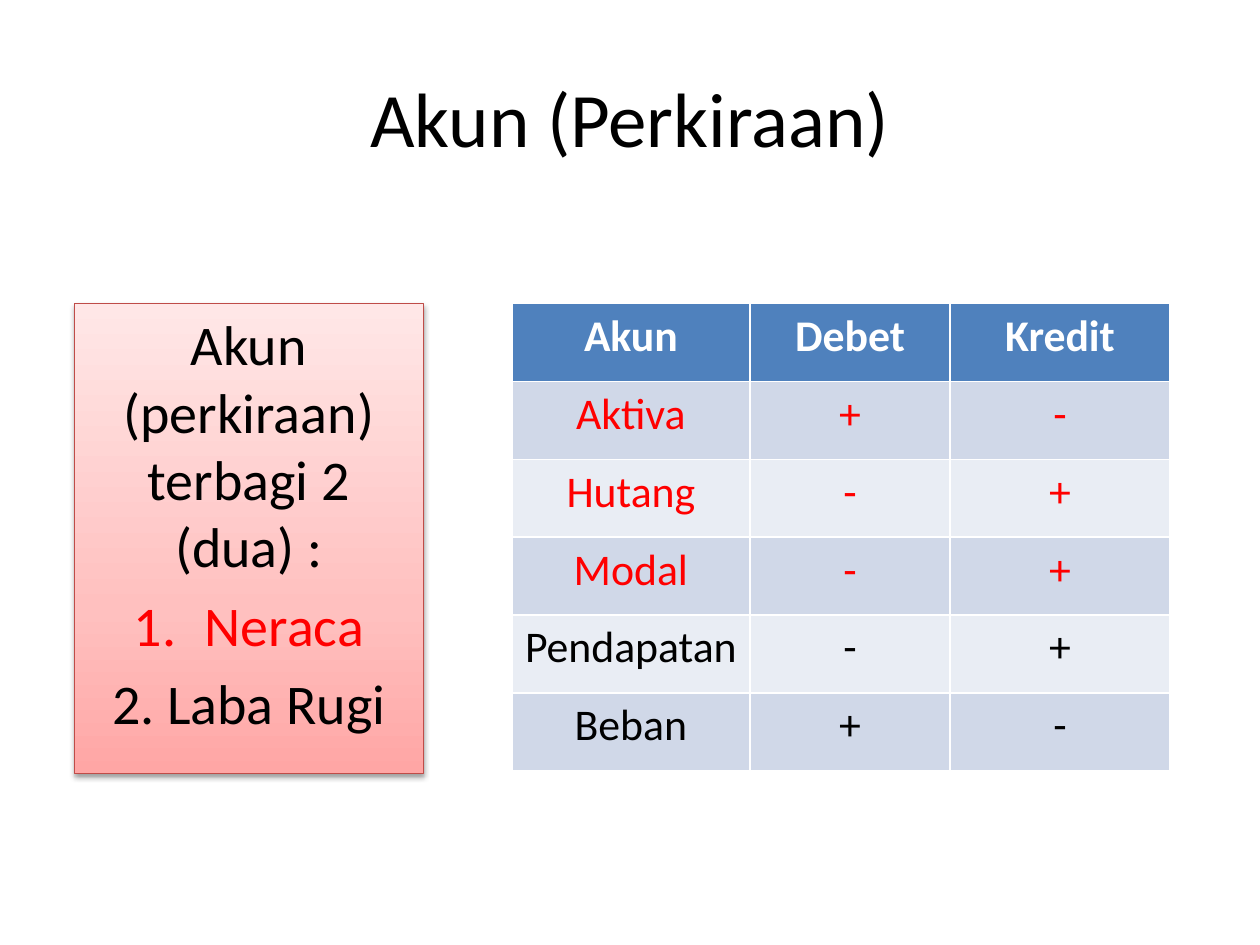
from dataclasses import dataclass

from lxml import etree
from pptx import Presentation
from pptx.dml.color import RGBColor
from pptx.enum import text
from pptx.oxml import ns
from pptx.util import Pt

FONT = "Calibri"
COLORS = {
    "black": "000000", "white": "FFFFFF", "red": "FF0000",
    "header": "4F81BD", "dark band": "D0D8E8", "light band": "E9EDF4",
    "box line": "BF4C48", "box bottom": "FFA6A5", "box middle": "FFC0BF", "box top": "FFE7E7",
}
COLUMN_WIDTHS = (136, 114.5, 125.5)
ROW_HEIGHT = 44.5


@dataclass
class Item:
    wording: str
    color: str = "black"
    numbered: bool = False


@dataclass
class Account:
    name: str
    debit: str
    credit: str
    color: str = "black"


ITEMS = [
    Item("Akun (perkiraan) terbagi 2 (dua) :"),
    Item("Neraca", "red", numbered=True),
    Item("2. Laba Rugi"),
]
HEADER = Account("Akun", "Debet", "Kredit", "white")
ACCOUNTS = [
    Account("Aktiva", "+", "-", "red"),
    Account("Hutang", "-", "+", "red"),
    Account("Modal", "-", "+", "red"),
    Account("Pendapatan", "-", "+"),
    Account("Beban", "+", "-"),
]


def rgb(name: str) -> RGBColor:
    return RGBColor.from_string(COLORS[name])


def place(shape, left: float, top: float, width: float, height: float) -> None:
    shape.left, shape.top, shape.width, shape.height = map(Pt, (left, top, width, height))


def write(para, wording: str, size: float, color: str, bold: bool = False) -> None:
    para.text = wording
    para.alignment = text.PP_ALIGN.CENTER
    para.font.name = FONT
    para.font.size = Pt(size)
    para.font.bold = bold
    para.font.color.rgb = rgb(color)


def add_xml(parent, markup: str) -> None:
    parent.append(etree.fromstring(markup))


def set_bullet(para, numbered: bool) -> None:
    """Number the paragraph with a hanging indent, or remove its bullet."""
    properties = para._p.get_or_add_pPr()
    indent = Pt(40.5) if numbered else 0
    properties.set("marL", str(indent))
    properties.set("indent", str(-indent))
    bullet = etree.Element(ns.qn("a:buAutoNum" if numbered else "a:buNone"))
    if numbered:
        bullet.set("type", "arabicPeriod")
    properties.insert(0, bullet)


def style_box(box) -> None:
    """Give the box a three-stop gradient, a thin line and a soft shadow."""
    stops = "".join(
        f'<a:gs pos="{percent * 1000}"><a:srgbClr val="{COLORS[name]}"/></a:gs>'
        for percent, name in ((0, "box bottom"), (35, "box middle"), (100, "box top")))
    properties = box._element.spPr
    add_xml(properties, f'<a:gradFill {ns.nsdecls("a")} rotWithShape="1"><a:gsLst>{stops}</a:gsLst>'
                        '<a:lin ang="16200000" scaled="1"/></a:gradFill>')
    box.line.color.rgb = rgb("box line")
    box.line.width = Pt(0.75)
    add_xml(properties, f'<a:effectLst {ns.nsdecls("a")}><a:outerShdw blurRad="{Pt(3.1)}" '
                        f'dist="{Pt(1.6)}" dir="5400000" rotWithShape="0">'
                        f'<a:srgbClr val="{COLORS["black"]}"><a:alpha val="38000"/></a:srgbClr>'
                        '</a:outerShdw></a:effectLst>')


def fill_box(box, items: list[Item]) -> None:
    frame = box.text_frame
    for index, item in enumerate(items):
        para = frame.add_paragraph() if index else frame.paragraphs[0]
        write(para, item.wording, 32, item.color)
        set_bullet(para, item.numbered)


def add_account_table(page, accounts: list[Account]) -> None:
    rows = [HEADER, *accounts]
    table = page.shapes.add_table(
        len(rows), len(COLUMN_WIDTHS), Pt(292.5), Pt(173.5),
        Pt(sum(COLUMN_WIDTHS)), Pt(ROW_HEIGHT * len(rows))).table
    for column, width in zip(table.columns, COLUMN_WIDTHS):
        column.width = Pt(width)
    for index, account in enumerate(rows):
        is_header = index == 0
        band = "header" if is_header else "dark band" if index % 2 else "light band"
        for cell, wording in zip(table.rows[index].cells,
                                 (account.name, account.debit, account.credit)):
            cell.fill.solid()
            cell.fill.fore_color.rgb = rgb(band)
            write(cell.text_frame.paragraphs[0], wording, 25, account.color, is_header)


def main() -> None:
    deck = Presentation()
    deck.slide_width, deck.slide_height = Pt(720), Pt(540)
    page = deck.slides.add_slide(deck.slide_layouts[1])
    title, box = page.placeholders
    place(title, 36, 21.6, 648, 90)
    write(title.text_frame.paragraphs[0], "Akun (Perkiraan)", 44, "black")
    place(box, 42.5, 173.5, 199.5, 268.5)
    style_box(box)
    fill_box(box, ITEMS)
    add_account_table(page, ACCOUNTS)
    deck.save("out.pptx")


if __name__ == "__main__":
    main()
